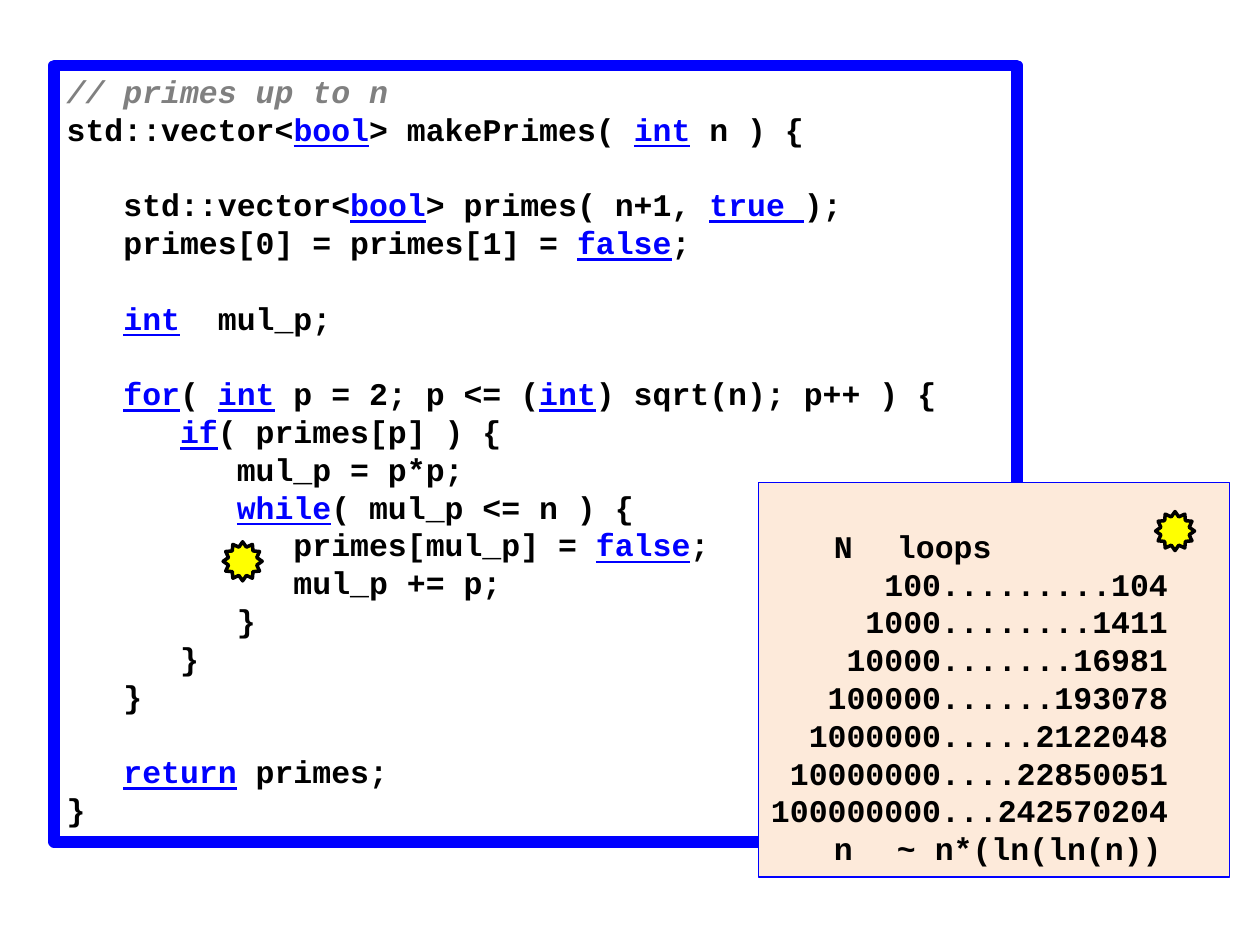
from dataclasses import dataclass
from typing import Optional

from lxml.etree import SubElement
from pptx import Presentation
from pptx.dml.color import RGBColor
from pptx.enum.shapes import MSO_SHAPE
from pptx.enum.text import MSO_ANCHOR, PP_ALIGN
from pptx.oxml.ns import qn
from pptx.util import Pt


@dataclass(frozen=True)
class Theme:
    font: str = "Courier New"
    size: float = 18
    char: float = 10.8
    line: float = 21.6
    blue: str = "0000FF"
    black: str = "000000"
    grey: str = "808080"
    peach: str = "FDEADA"
    yellow: str = "FFFF00"


@dataclass(frozen=True)
class Box:
    x: float
    y: float
    w: float
    h: float
    line: str
    weight: float
    fill: Optional[str] = None
    kind: MSO_SHAPE = MSO_SHAPE.RECTANGLE


T = Theme()
STAR = 22.3

CODE = """\
// primes up to n
std::vector<|bool|> makePrimes( |int| n ) {

   std::vector<|bool|> primes( n+1, |true |);
   primes[0] = primes[1] = |false|;

   |int|  mul_p;

   |for|( |int| p = 2; p <= (|int|) sqrt(n); p++ ) {
      |if|( primes[p] ) {
         mul_p = p*p;
         |while|( mul_p <= n ) {
            primes[mul_p] = |false|;
            mul_p += p;
         }
      }
   }

   |return| primes;
}"""

LOOPS = [(100, 104), (1000, 1411), (10000, 16981), (100000, 193078),
         (1000000, 2122048), (10000000, 22850051), (100000000, 242570204)]


def add_box(s, b: Box):
    sp = s.shapes.add_shape(b.kind, Pt(b.x), Pt(b.y), Pt(b.w), Pt(b.h))
    sp.shadow.inherit = False
    if b.fill:
        sp.fill.solid()
        sp.fill.fore_color.rgb = RGBColor.from_string(b.fill)
    else:
        sp.fill.background()
    sp.line.color.rgb = RGBColor.from_string(b.line)
    sp.line.width = Pt(b.weight)
    return sp


def open_text(sp, top: float = 3.6):
    tf = sp.text_frame
    tf.word_wrap = True
    tf.vertical_anchor = MSO_ANCHOR.TOP
    tf.margin_top = Pt(top)
    return tf


def add_line(tf, first: bool, indent: int = 0, gap: float = 0):
    p = tf.paragraphs[0] if first else tf.add_paragraph()
    p.alignment = PP_ALIGN.LEFT
    p.line_spacing = Pt(T.line)
    p.space_before = Pt(gap)
    pPr = p._p.get_or_add_pPr()
    pPr.set("marL", str(Pt(indent * T.char)))
    pPr.set("indent", "0")
    return p


def add_run(p, text: str, color: str = T.black, underline: bool = False,
            italic: bool = False) -> None:
    r = p.add_run()
    r.text = text
    f = r.font
    f.name, f.size, f.bold = T.font, Pt(T.size), True
    f.italic, f.underline = italic, underline
    f.color.rgb = RGBColor.from_string(color)


def add_tabs(p, *columns: int) -> None:
    tabs = SubElement(p._p.get_or_add_pPr(), qn("a:tabLst"))
    for col in columns:
        SubElement(tabs, qn("a:tab"), pos=str(Pt(col * T.char)), algn="l")


def write_code(tf, code: str) -> None:
    gap = 0
    for i, line in enumerate(code.splitlines()):
        body = line.lstrip()
        if not body:
            gap += T.line
            continue
        p = add_line(tf, i == 0, len(line) - len(body), gap)
        gap = 0
        if body.startswith("//"):
            add_run(p, body, T.grey, italic=True)
            continue
        for j, part in enumerate(body.split("|")):
            keyword = j % 2 == 1
            if part:
                add_run(p, part, T.blue if keyword else T.black, keyword)


def write_loops(tf) -> None:
    p = add_line(tf, True)
    add_tabs(p, 8, 16)
    add_run(p, "\tN\tloops")
    for n, loops in LOOPS:
        left = str(n)
        p = add_line(tf, False, 9 - len(left))
        add_run(p, left + str(loops).rjust(12, "."))
    p = add_line(tf, False)
    add_tabs(p, 4, 9)
    add_run(p, "\tn\t~ n*(ln(ln(n))")


def add_star(s, x: float, y: float) -> None:
    add_box(s, Box(x, y, STAR, STAR, T.black, 2, T.yellow,
                   MSO_SHAPE.STAR_12_POINT))


def main() -> None:
    prs = Presentation()
    prs.slide_width, prs.slide_height = Pt(720), Pt(540)
    s = prs.slides.add_slide(prs.slide_layouts[6])

    code = add_box(s, Box(31, 37.5, 550, 443.5, T.blue, 6.75))
    write_code(open_text(code), CODE)
    add_star(s, 127.5, 309.6)

    table = add_box(s, Box(433.5, 275.8, 269.3, 225.4, T.blue, 0.75, T.peach))
    write_loops(open_text(table, 3.6 + T.line))
    add_star(s, 660.3, 292.3)

    prs.save("out.pptx")


if __name__ == "__main__":
    main()
